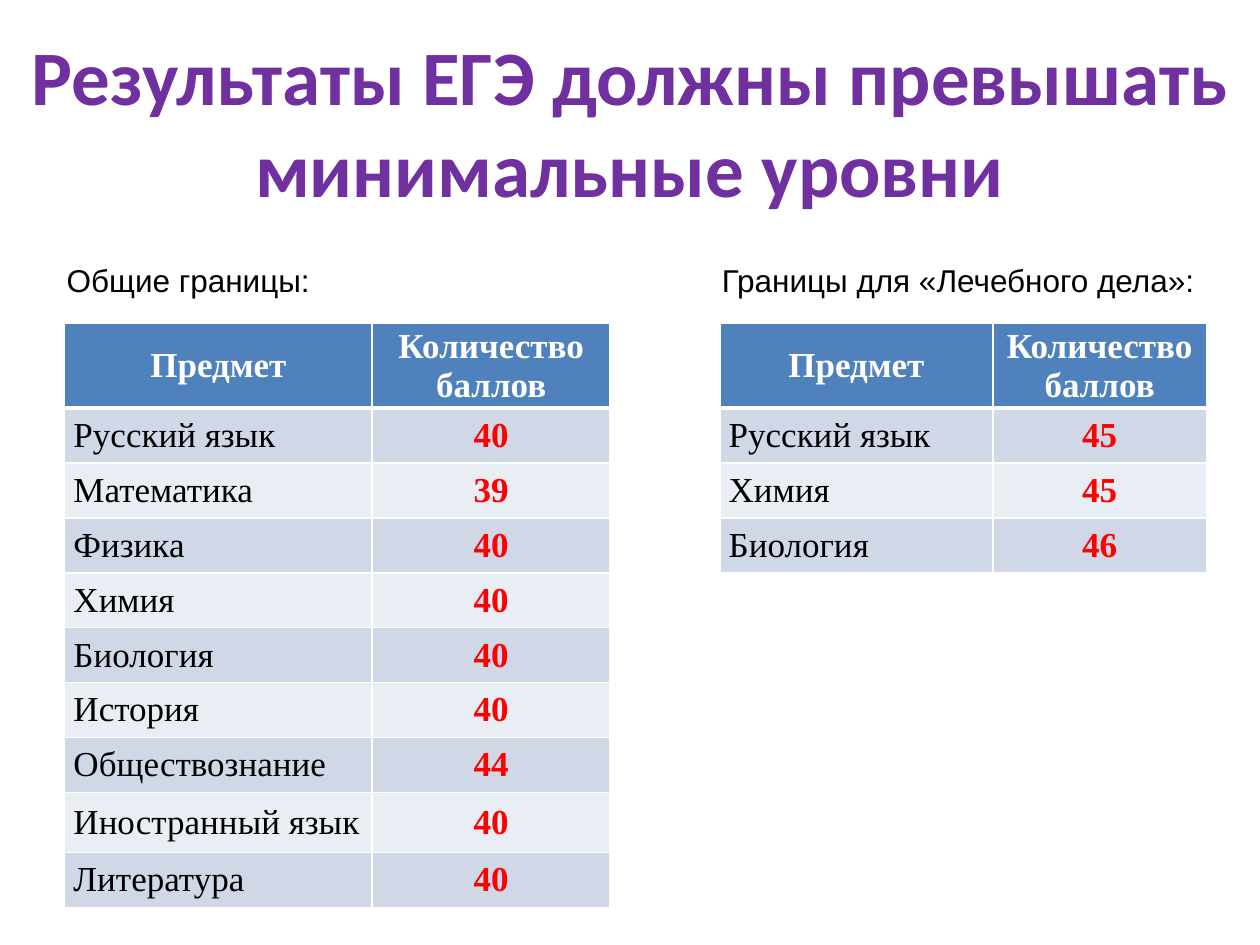
from lxml.etree import SubElement as Sub
from pptx import Presentation
from pptx.dml.color import RGBColor
from pptx.enum.text import MSO_ANCHOR as Anchor, PP_ALIGN as Align
from pptx.oxml.ns import qn
from pptx.util import Pt

PURPLE = RGBColor(0x70, 0x30, 0xA0)
BLUE = RGBColor(0x4F, 0x81, 0xBD)
BANDS = RGBColor(0xD0, 0xD8, 0xE8), RGBColor(0xE9, 0xED, 0xF4)
WHITE = RGBColor(0xFF, 0xFF, 0xFF)
BLACK = RGBColor(0, 0, 0)
RED = RGBColor(0xFF, 0, 0)

HEAD = "Предмет", "Количество баллов"
COMMON = [
    ("Русский язык", 40), ("Математика", 39), ("Физика", 40),
    ("Химия", 40), ("Биология", 40), ("История", 40),
    ("Обществознание", 44), ("Иностранный язык", 40), ("Литература", 40),
]
MEDICAL = [("Русский язык", 45), ("Химия", 45), ("Биология", 46)]

HEAD_H, ROW_H, TALL_H = 48.2, 31.4, 34.3
TALL = "Иностранный язык"


def add_run(par, text, face, size, color, bold=False):
    run = par.add_run()
    run.text = text
    font = run.font
    font.name, font.size, font.bold = face, Pt(size), bold
    font.color.rgb = color


def add_title(slide, text, left, top, width, height):
    title = slide.shapes.title
    title.left, title.top = Pt(left), Pt(top)
    title.width, title.height = Pt(width), Pt(height)
    frame = title.text_frame
    frame.vertical_anchor = Anchor.MIDDLE
    par = frame.paragraphs[0]
    par.alignment = Align.CENTER
    add_run(par, text, "Calibri", 44, PURPLE, True)


def add_label(slide, text, left, top, width, height):
    box = slide.shapes.add_textbox(Pt(left), Pt(top), Pt(width), Pt(height))
    box.text_frame.word_wrap = False
    add_run(box.text_frame.paragraphs[0], text, "Arial", 18, BLACK)


def set_edges(cell, top, bottom):
    props = cell._tc.get_or_add_tcPr()
    for side, wide in (("L", 1), ("R", 1), ("T", top), ("B", bottom)):
        line = Sub(props, qn(f"a:ln{side}"), w=str(Pt(wide)))
        fill = Sub(line, qn("a:solidFill"))
        Sub(fill, qn("a:srgbClr"), val=str(WHITE))


def fill_cell(cell, text, row, col):
    # The header is parted from the body by a thick rule
    set_edges(cell, 3 if row == 1 else 1, 3 if row == 0 else 1)
    cell.fill.solid()
    cell.fill.fore_color.rgb = BANDS[(row - 1) % 2] if row else BLUE
    cell.vertical_anchor = Anchor.MIDDLE
    cell.margin_left = cell.margin_right = Pt(5)
    cell.margin_top = cell.margin_bottom = 0
    par = cell.text_frame.paragraphs[0]
    name = row > 0 and col == 0
    par.alignment = Align.JUSTIFY if name else Align.CENTER
    color = WHITE if row == 0 else BLACK if name else RED
    add_run(par, text, "Times New Roman", 20, color, not name)


def add_scores(slide, scores, left, top, widths):
    rows = [HEAD, *scores]
    heights = [HEAD_H] + [TALL_H if name == TALL else ROW_H
                          for name, _ in scores]
    table = slide.shapes.add_table(
        len(rows), len(HEAD), Pt(left), Pt(top),
        Pt(sum(widths)), Pt(sum(heights))).table
    for column, width in zip(table.columns, widths):
        column.width = Pt(width)
    for r, (values, height) in enumerate(zip(rows, heights)):
        table.rows[r].height = Pt(height)
        for c, value in enumerate(values):
            fill_cell(table.cell(r, c), str(value), r, c)


def add_panel(slide, label, scores, left, top, wide, widths):
    add_label(slide, label, left, top, wide, 29)
    add_scores(slide, scores, left + 6, top + 39.6, widths)


def main():
    deck = Presentation()
    deck.slide_width, deck.slide_height = Pt(720), Pt(540)
    slide = deck.slides.add_slide(deck.slide_layouts[5])

    # Heading
    add_title(slide, "Результаты ЕГЭ должны превышать минимальные уровни",
              0, 9.4, 720, 118.8)

    # Score limits, side by side
    add_panel(slide, "Общие границы:", COMMON,
              31, 145.4, 155, (175.7, 136))
    add_panel(slide, "Границы для «Лечебного дела»:", MEDICAL,
              405.4, 145.4, 287, (156, 122))

    deck.save("out.pptx")


if __name__ == "__main__":
    main()
